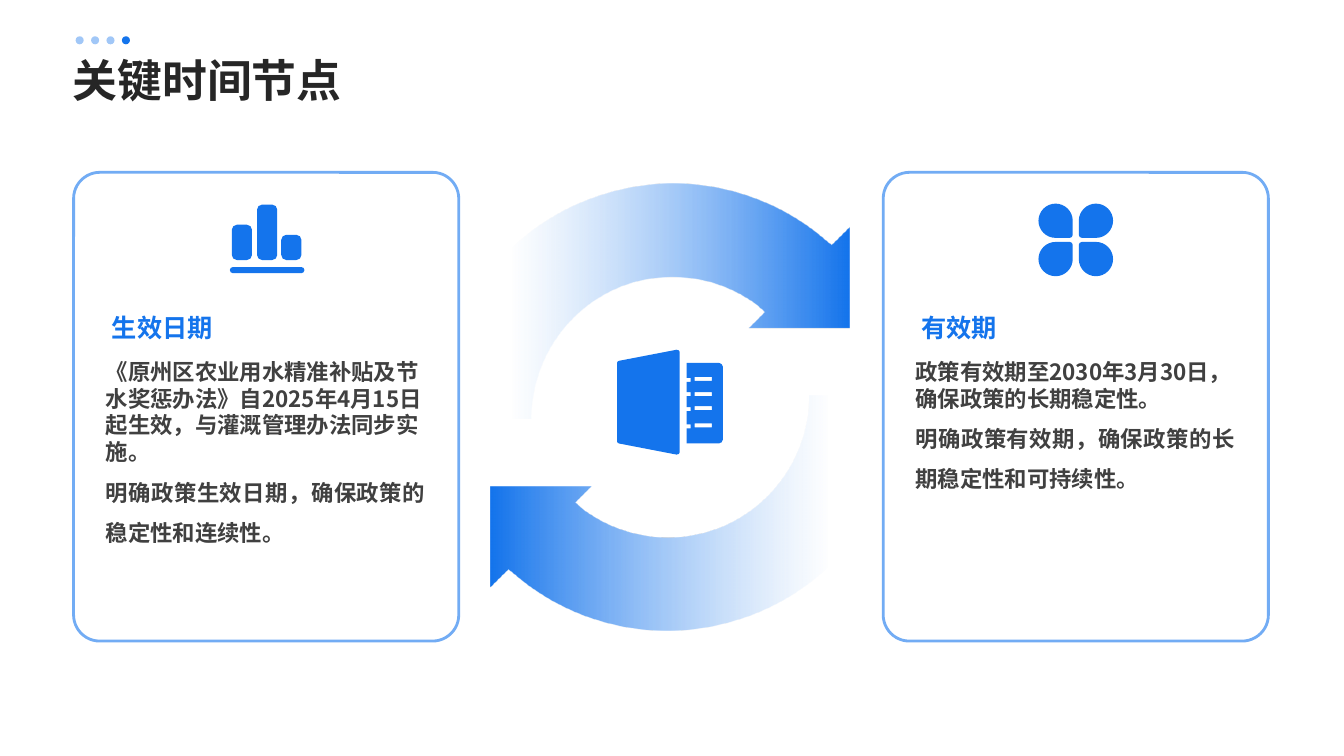
import pptx
import pptx.util
import pptx.dml.color
import pptx.enum.shapes
import pptx.enum.text
import pptx.oxml.ns
import lxml.etree

Inches = pptx.util.Inches
Pt = pptx.util.Pt
RGBColor = pptx.dml.color.RGBColor
SHAPE = pptx.enum.shapes.MSO_SHAPE
ALIGN = pptx.enum.text.PP_ALIGN
ANCHOR = pptx.enum.text.MSO_ANCHOR
qn = pptx.oxml.ns.qn

BLUE = RGBColor(0x14, 0x74, 0xEC)
LIGHT_BLUE = RGBColor(0x72, 0xAC, 0xF4)
WHITE = RGBColor(0xFF, 0xFF, 0xFF)
TITLE_INK = RGBColor(0x26, 0x26, 0x26)
BODY_INK = RGBColor(0x40, 0x40, 0x40)
FONT = "Noto Sans CJK SC"

prs = pptx.Presentation()
prs.slide_width, prs.slide_height = Inches(13.33), Inches(7.5)
s = prs.slides.add_slide(prs.slide_layouts[6])


def add_outline(contours):
    """Draw contours in inches; a 2-tuple is a corner, a 6-tuple a Bezier curve."""
    builder = None
    for contour in contours:
        start, *ends = [(Inches(step[-2]), Inches(step[-1])) for step in contour]
        if builder is None:
            builder = s.shapes.build_freeform(*start, scale=1.0)
        else:
            builder.move_to(*start)
        builder.add_line_segments(ends, close=False)
        builder.add_line_segments([], close=True)
    sp = builder.convert_to_shape()
    # Turn the segments that have control points into curves
    steps = [step for contour in contours for step in contour[1:]]
    segments = list(sp._element.spPr.iter(qn("a:lnTo")))
    for segment, step in zip(segments, steps):
        if len(step) == 6:
            segment.tag = qn("a:cubicBezTo")
            for i, (x, y) in enumerate((step[:2], step[2:4])):
                pt = lxml.etree.Element(qn("a:pt"))
                pt.set("x", str(Inches(x) - sp.left))
                pt.set("y", str(Inches(y) - sp.top))
                segment.insert(i, pt)
    sp.shadow.inherit = False
    sp.line.fill.background()
    sp.fill.solid()
    sp.fill.fore_color.rgb = BLUE
    return sp


def add_text(box, paragraphs, size, color, inset=(0, 0), anchor=ANCHOR.MIDDLE):
    """Add bold text; each paragraph is (text, alignment, line spacing)."""
    tf = s.shapes.add_textbox(*map(Inches, box)).text_frame
    tf.word_wrap = True
    tf.vertical_anchor = anchor
    tf.margin_left = tf.margin_right = Inches(inset[0])
    tf.margin_top = tf.margin_bottom = Inches(inset[1])
    for i, (text, alignment, spacing) in enumerate(paragraphs):
        p = tf.paragraphs[0] if i == 0 else tf.add_paragraph()
        r = p.add_run()
        r.text = text
        p.alignment, p.line_spacing = alignment, spacing
        p.font.size, p.font.bold, p.font.name = Pt(size), True, FONT
        p.font.color.rgb = color
        # East Asian typeface for the Chinese glyphs
        r.font.name = FONT
        lxml.etree.SubElement(r._r.get_or_add_rPr(), qn("a:ea")).set("typeface", FONT)


# Two circling arrows, the lower one turned half a circle
arrow = [(6.62, 1.82), (7.18, 1.81, 7.74, 2, 8.18, 2.38), (8.24, 2.43), (8.42, 2.25),
         (8.42, 3.25), (7.42, 3.25), (7.58, 3.09), (7.5, 3.02),
         (7.11, 2.73, 6.59, 2.66, 6.13, 2.85), (5.61, 3.07, 5.27, 3.58, 5.27, 4.15),
         (4.34, 4.15), (4.34, 3.21, 4.91, 2.36, 5.78, 2), (6.05, 1.89, 6.33, 1.83, 6.62, 1.82)]
for left, top, turn in ((4.34, 1.82, 0), (4.87, 3.92, 180)):
    sp = add_outline([arrow])
    sp.left, sp.top, sp.rotation = Inches(left), Inches(top), turn
    sp.fill.gradient()
    sp.fill.gradient_angle = 0
    for stop, color, position in zip(sp.fill.gradient_stops, (LIGHT_BLUE, BLUE), (0.18, 1)):
        stop.color.rgb, stop.position = color, position
    first_color = sp._element.spPr.find(".//" + qn("a:srgbClr"))
    lxml.etree.SubElement(first_color, qn("a:alpha")).set("val", "0")

# Cards with heading and body
cards = [
    (0.73, "生效日期",
     "《原州区农业用水精准补贴及节水奖惩办法》自2025年4月15日起生效，与灌溉管理办法同步实施。",
     "明确政策生效日期，确保政策的稳定性和连续性。"),
    (8.76, "有效期",
     "政策有效期至2030年3月30日，确保政策的长期稳定性。",
     "明确政策有效期，确保政策的长期稳定性和可持续性。"),
]
for left, heading, term, purpose in cards:
    sp = s.shapes.add_shape(SHAPE.ROUNDED_RECTANGLE, Inches(left), Inches(1.71),
                            Inches(3.82), Inches(4.65))
    sp.adjustments[0] = 0.068
    sp.shadow.inherit = False
    sp.fill.solid()
    sp.fill.fore_color.rgb = WHITE
    sp.line.color.rgb, sp.line.width = LIGHT_BLUE, Pt(2)
    add_text((left + 0.31, 2.98, 3.24, 0.51), [(heading, ALIGN.JUSTIFY, 1.1)],
             18, BLUE, (0.07, 0.04))
    add_text((left + 0.28, 3.51, 3.25, 2.73),
             [(term, ALIGN.LEFT, Pt(19.2)), (purpose, ALIGN.JUSTIFY, Pt(28.8))],
             16, BODY_INK, (0.04, 0.04), ANCHOR.TOP)

# Bar and petal icons: rounded boxes as (x, y, w, h, corner radii clockwise from top left)
bars = [(2.28, 2.65, 0.74, 0.06, [0.03] * 4)]
for x, y in ((2.3, 2.23), (2.55, 2.03), (2.79, 2.33)):
    bars.append((x, y, 0.2, 2.58 - y, [0.05] * 4))
petals = []
for x, y, inner in ((10.3, 2.02, 2), (10.7, 2.02, 3), (10.3, 2.4, 1), (10.7, 2.4, 0)):
    petals.append((x, y, 0.34, 0.34, [0.03 if i == inner else 0.17 for i in range(4)]))
for icon in (bars, petals):
    contours = []
    for x, y, w, h, (tl, tr, br, bl) in icon:
        k, x2, y2 = 0.45, x + w, y + h
        contours.append([
            (x + tl, y), (x2 - tr, y),
            (x2 - k * tr, y, x2, y + k * tr, x2, y + tr), (x2, y2 - br),
            (x2, y2 - k * br, x2 - k * br, y2, x2 - br, y2), (x + bl, y2),
            (x + k * bl, y2, x, y2 - k * bl, x, y2 - bl), (x, y + tl),
            (x, y + k * tl, x + k * tl, y, x + tl, y)])
    add_outline(contours)

# Notebook icon in the centre: cover, notched page and line slots
cover = [(6.71, 3.47), (6.73, 3.47, 6.74, 3.48, 6.74, 3.49), (6.74, 4.49),
         (6.74, 4.5, 6.73, 4.51, 6.71, 4.51), (6.14, 4.4),
         (6.13, 4.4, 6.12, 4.39, 6.12, 4.38), (6.12, 3.6), (6.12, 3.59, 6.13, 3.58, 6.14, 3.58)]
page = [(6.81, 3.6), (7.13, 3.6), (7.15, 3.6, 7.17, 3.62, 7.17, 3.64), (7.17, 4.36),
        (7.17, 4.38, 7.15, 4.4, 7.13, 4.4), (6.81, 4.4)]
for y in (4.21, 4.04, 3.89, 3.75):
    page += [(6.81, y + 0.04), (6.85, y + 0.04), (6.85, y), (6.81, y)]
slots = [[(6.89, y), (6.89, y + 0.04), (7.06, y + 0.04), (7.06, y)]
         for y in (4.2, 4.03, 3.89, 3.74)]
add_outline([cover, page] + slots)

# Title
add_text((0.72, 0.51, 11.88, 0.51), [("关键时间节点", ALIGN.JUSTIFY, 1.1)], 32, TITLE_INK)

# Row of dots above the title, the last one solid
dots = s.shapes.add_group_shape()
for i in range(4):
    sp = dots.shapes.add_shape(SHAPE.OVAL, Inches(0.75 + i * 0.153), Inches(0.36),
                               Inches(0.08), Inches(0.08))
    sp.shadow.inherit = False
    sp.line.fill.background()
    sp.fill.solid()
    sp.fill.fore_color.rgb = BLUE
    if i < 3:
        color = sp._element.spPr.find(".//" + qn("a:srgbClr"))
        lxml.etree.SubElement(color, qn("a:alpha")).set("val", "40000")

prs.save("out.pptx")
